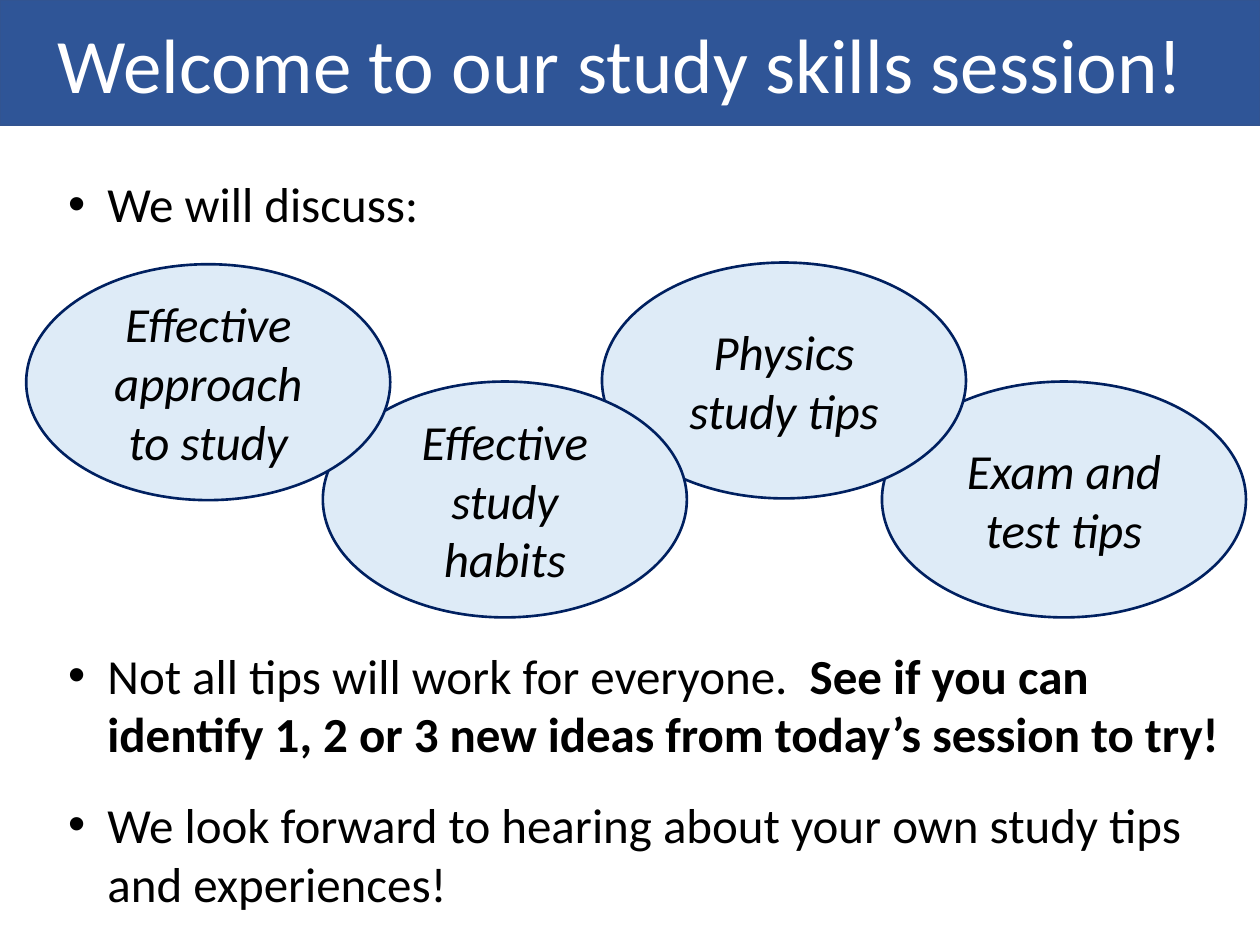
from pptx import Presentation
from pptx.dml.color import RGBColor
from pptx.enum import shapes, text
from pptx.oxml import parse_xml
from pptx.oxml.ns import nsdecls
from pptx.util import Pt

TITLE = "Welcome to our study skills session! "
# Each list: box (left, top, width, height), then bullets as (text, bold) spans
LISTS = [
    ((31.7, 365, 680.4, 161.3), [
        [("Not all tips will work for everyone.  ", False),
         ("See if you can identify 1, 2 or 3 new ideas from today’s session to try!", True)],
        [("We look forward to hearing about your own study tips and experiences!", False)],
    ]),
    ((31.7, 95.8, 655.9, 41), [[("We will discuss:", False)]]),
]
# Topics from back to front: text, left, top
TOPICS = [
    ("Exam and test tips", 504, 218),
    ("Physics study tips", 344, 150),
    ("Effective study habits", 184.5, 218),
    ("Effective approach to study", 15, 151),
]
TOPIC_SIZE = (208, 134.8)
INDENT = 22.5


def colour(value):
    return RGBColor.from_string(value)


def place(box, left, top, width, height):
    box.left, box.top, box.width, box.height = Pt(left), Pt(top), Pt(width), Pt(height)


def paint(box, fill, line, weight):
    box.fill.solid()
    box.fill.fore_color.rgb = colour(fill)
    box.line.color.rgb = colour(line)
    box.line.width = Pt(weight)


def write(para, words, size=28, ink="000000", bold=False, italic=False, align=None):
    para.alignment = align
    span = para.add_run()
    span.text = words
    font = span.font
    font.name, font.size, font.bold, font.italic = "Calibri", Pt(size), bold, italic
    font.color.rgb = colour(ink)


def add_bullet(para):
    props = para._p.get_or_add_pPr()
    props.set("marL", str(Pt(INDENT)))
    props.set("indent", str(-Pt(INDENT)))
    for tag, value in (('buFont', 'typeface="Arial"'), ('buChar', 'char="•"')):
        props.append(parse_xml(f"<a:{tag} {nsdecls('a')} {value}/>"))


def fill_list(box, bullets):
    frame = box.text_frame
    frame.word_wrap = True
    frame.auto_size = text.MSO_AUTO_SIZE.SHAPE_TO_FIT_TEXT
    for number, spans in enumerate(bullets):
        para = frame.add_paragraph() if number else frame.paragraphs[0]
        para.space_before, para.space_after = Pt(0), Pt(18)
        add_bullet(para)
        for words, bold in spans:
            write(para, words, bold=bold)


def add_topic(page, words, left, top):
    oval = page.shapes.add_shape(shapes.MSO_SHAPE.OVAL, Pt(left), Pt(top),
                                 *map(Pt, TOPIC_SIZE))
    oval.shadow.inherit = False
    paint(oval, "DEEBF7", "002060", 1.5)
    frame = oval.text_frame
    frame.word_wrap = True
    frame.vertical_anchor = text.MSO_ANCHOR.MIDDLE
    write(frame.paragraphs[0], words, italic=True, align=text.PP_ALIGN.CENTER)


def main():
    deck = Presentation()
    deck.slide_width, deck.slide_height = Pt(720), Pt(540)
    page = deck.slides.add_slide(deck.slide_layouts.get_by_name("Two Content"))

    title = page.shapes.title
    place(title, 0, 0, 720, 71.3)
    paint(title, "2F5597", "325491", 1)
    title.text_frame.auto_size = text.MSO_AUTO_SIZE.NONE
    title.text_frame.vertical_anchor = text.MSO_ANCHOR.MIDDLE
    write(title.text_frame.paragraphs[0], TITLE, size=44, ink="FFFFFF",
          align=text.PP_ALIGN.CENTER)

    for index, (area, bullets) in enumerate(LISTS, start=1):
        box = page.placeholders[index]
        place(box, *area)
        fill_list(box, bullets)

    for topic in TOPICS:
        add_topic(page, *topic)

    # The layout's date, footer and number are not carried to the page
    deck.save("out.pptx")


if __name__ == "__main__":
    main()
